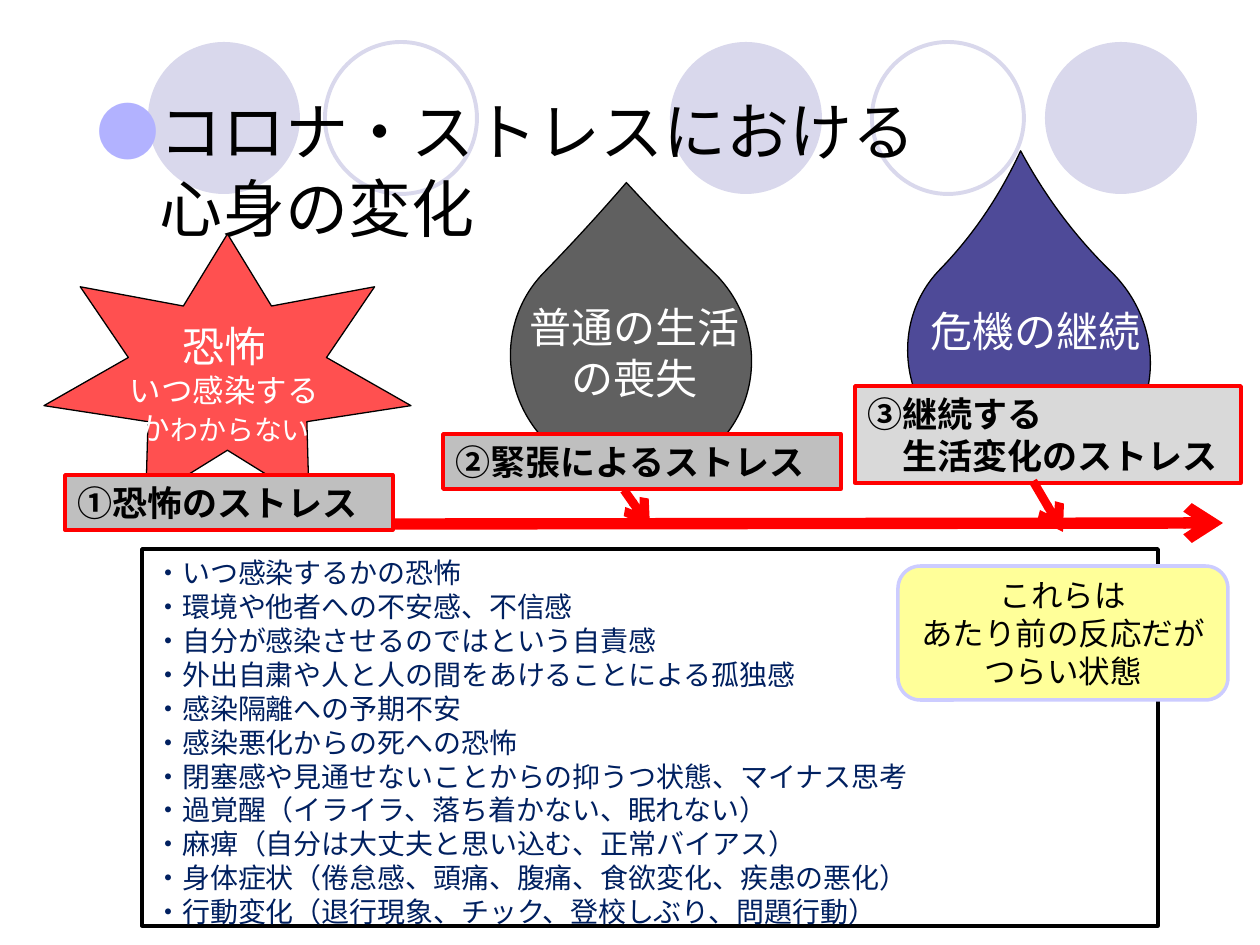
from lxml.etree import SubElement
from pptx import Presentation
from pptx.dml.color import RGBColor
from pptx.enum.shapes import MSO_CONNECTOR as Line, MSO_SHAPE as Shape
from pptx.enum.text import MSO_ANCHOR as Anchor, PP_ALIGN as Align
from pptx.oxml.ns import qn
from pptx.util import Emu, Pt

EMU_PER_INCH, PX_PER_INCH = 914400, 126
LINE_HEIGHT = 1.21
CJK = "Noto Sans CJK JP"


def px(length):
    return Emu(round(length * EMU_PER_INCH / PX_PER_INCH))


def color(value):
    return RGBColor.from_string(value)


class SlideBuilder:
    """Holds the style and the current slide."""

    def __init__(self, deck):
        self.page = deck.slides.add_slide(deck.slide_layouts[6])

    def shape(self, kind, at, fill=None, line=None, width=0.75, rotation=0, adjust=None):
        box = self.page.shapes.add_shape(kind, *map(px, at))
        box.shadow.inherit = False
        box.rotation = rotation
        if adjust is not None:
            box.adjustments[0] = adjust
        if fill:
            box.fill.solid()
            box.fill.fore_color.rgb = color(fill)
        else:
            box.fill.background()
        if line:
            box.line.color.rgb = color(line)
            box.line.width = Pt(width)
        else:
            box.line.fill.background()
        return box

    def text_box(self, at, paras, **style):
        box = self.page.shapes.add_textbox(*map(px, at))
        self.fill_text(box, paras, **style)

    def fill_text(self, box, paras, size, ink, font=CJK, bold=False,
                  align=Align.LEFT, anchor=Anchor.TOP):
        """Fill a box; a paragraph is a string or a list of (text, size, ink)."""
        frame = box.text_frame
        frame.word_wrap = True
        frame.vertical_anchor = anchor
        for index, content in enumerate(paras):
            para = frame.paragraphs[0] if index == 0 else frame.add_paragraph()
            spans = [(content, size, ink)] if isinstance(content, str) else content
            para.alignment = align
            para.line_spacing = Pt(round(max(span[1] for span in spans) * LINE_HEIGHT, 1))
            for text, span_size, span_ink in spans:
                span = para.add_run()
                span.text = text
                values = {"name": font, "size": Pt(span_size), "bold": bold}
                for name, value in values.items():
                    setattr(span.font, name, value)
                span.font.color.rgb = color(span_ink)
                SubElement(span.font._element, qn("a:ea")).set("typeface", CJK)

    def arrow(self, start, end, width, ink="FF0000"):
        arrow = self.page.shapes.add_connector(Line.STRAIGHT, *map(px, start + end))
        arrow.line.color.rgb = color(ink)
        arrow.line.width = Pt(width)
        SubElement(arrow.line._get_or_add_ln(), qn("a:tailEnd")).set("type", "arrow")
        SubElement(arrow._element.spPr, qn("a:effectLst"))

    def label(self, at, paras, fill):
        box = self.shape(Shape.RECTANGLE, at, fill, "FF0000", 2)
        self.fill_text(box, paras, 20, "000000", bold=True, anchor=Anchor.MIDDLE)


def main():
    deck = Presentation()
    deck.slide_width, deck.slide_height = px(1260), px(945)
    slide = SlideBuilder(deck)

    for left in (670, 1045, 148):
        slide.shape(Shape.OVAL, (left, 42, 152, 152), fill="D9D8EC")
    for left in (872, 325):
        slide.shape(Shape.OVAL, (left, 42, 152, 152), line="D9D8EC", width=2.25)

    title = [[("●", 36, "B2B2FF"), ("コロナ・ストレスにおける", 36, "000000")],
             "　心身の変化"]
    slide.text_box((84, 60, 998, 217), title, size=36, ink="000000", anchor=Anchor.MIDDLE)

    white = {"size": 24, "ink": "FFFFFF", "align": Align.CENTER}
    slide.shape(Shape.TEAR, (512, 236, 238, 244), "606060", "000000",
                rotation=314.2, adjust=1.03)
    slide.shape(Shape.TEAR, (911, 232, 236, 249), "4E4A98", "000000",
                rotation=314.2, adjust=1.2)
    slide.text_box((510, 295, 249, 115), ["普通の生活の喪失"], **white)
    slide.text_box((912, 299, 247, 63), ["危機の継続"], **white)
    slide.label((443, 434, 398, 55), ["②緊張によるストレス"], "BFBFBF")
    slide.label((855, 386, 386, 97), ["③継続する", "　生活変化のストレス"], "D9D9D9")

    slide.shape(Shape.STAR_7_POINT, (44, 234, 367, 267), "FF5050", "000000", adjust=0.27)
    slide.label((65, 475, 328, 55), ["①恐怖のストレス"], "BFBFBF")
    fear = ["恐怖", [("いつ感染するか", 18, "FFFFFF"), ("わからない", 16, "FFFFFF")]]
    slide.text_box((105, 314, 239, 136), fear, **white)

    slide.arrow((393, 524), (1223, 523), 6.5)
    slide.arrow((624, 490), (650, 527), 5)
    slide.arrow((1033, 481), (1063, 532), 5)

    reactions = [
        "いつ感染するかの恐怖",
        "環境や他者への不安感、不信感",
        "自分が感染させるのではという自責感",
        "外出自粛や人と人の間をあけることによる孤独感",
        "感染隔離への予期不安",
        "感染悪化からの死への恐怖",
        "閉塞感や見通せないことからの抑うつ状態、マイナス思考",
        "過覚醒（イライラ、落ち着かない、眠れない）",
        "麻痺（自分は大丈夫と思い込む、正常バイアス）",
        "身体症状（倦怠感、頭痛、腹痛、食欲変化、疾患の悪化）",
        "行動変化（退行現象、チック、登校しぶり、問題行動）",
    ]
    box = slide.shape(Shape.RECTANGLE, (142, 549, 1016, 377), "FFFFFF", "000000", 2)
    slide.fill_text(box, ["・" + reaction for reaction in reactions], 16, "002060", font="Arial")

    note = slide.shape(Shape.ROUNDED_RECTANGLE, (898, 566, 330, 134), "FFFF99", "CCCCFF", 2)
    slide.fill_text(note, ["これらは", "あたり前の反応だが", "つらい状態"], 18, "000000",
                    font="Arial", align=Align.CENTER, anchor=Anchor.MIDDLE)

    deck.save("out.pptx")


if __name__ == "__main__":
    main()
